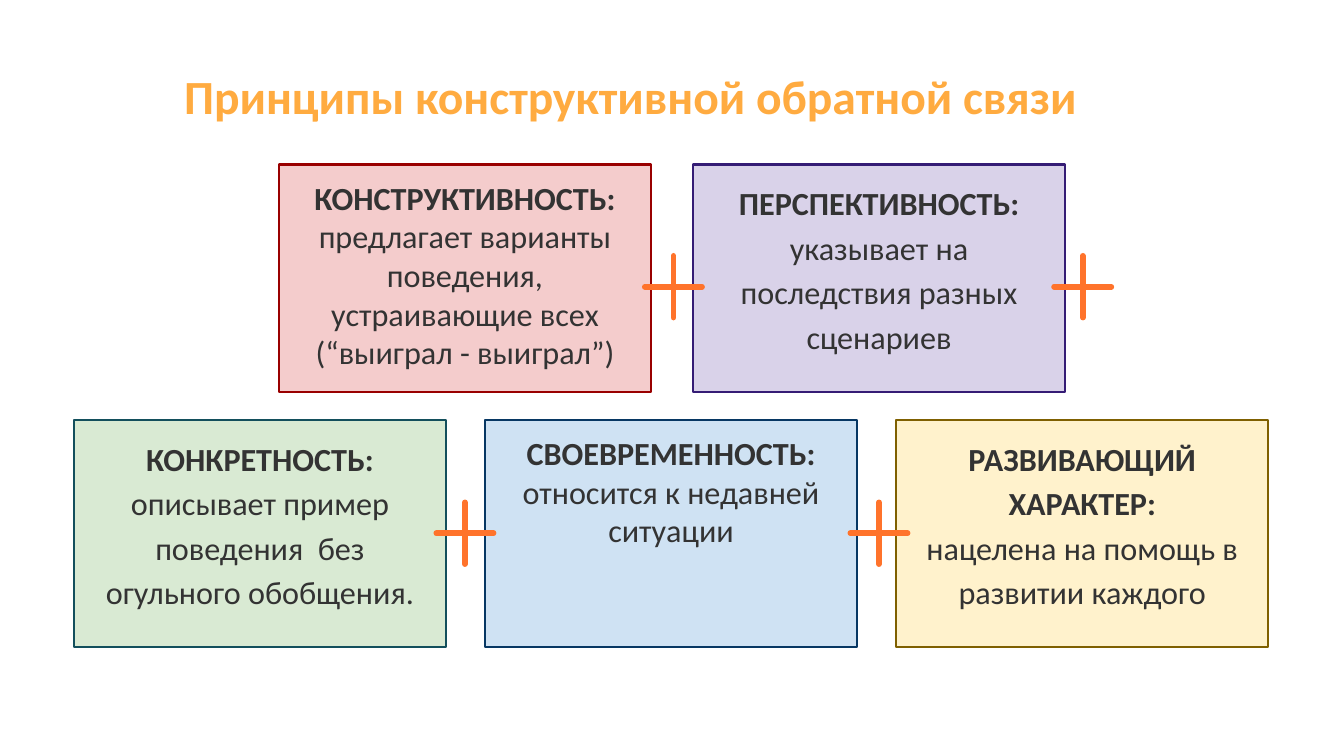
from pptx import Presentation
from pptx.dml.color import RGBColor
from pptx.enum.shapes import MSO_SHAPE as Shape
from pptx.enum.text import MSO_ANCHOR as Anchor, MSO_AUTO_SIZE as AutoSize, PP_ALIGN as Align
from pptx.util import Cm, Pt

FONT = "Calibri"
TEXT_COLOR = RGBColor(0x33, 0x33, 0x33)
TITLE_COLOR = RGBColor(0xFF, 0xAB, 0x40)
PLUS_LINE = RGBColor(0xFF, 0x73, 0x2B)
PLUS_FILL = RGBColor(0xEE, 0xEE, 0xEE)
GREEN, DARK_GREEN = RGBColor(0xD9, 0xEA, 0xD3), RGBColor(0x13, 0x4F, 0x5C)
BLUE, DARK_BLUE = RGBColor(0xCF, 0xE2, 0xF3), RGBColor(0x07, 0x37, 0x63)
YELLOW, DARK_YELLOW = RGBColor(0xFF, 0xF2, 0xCC), RGBColor(0x7F, 0x60, 0x00)
RED, DARK_RED = RGBColor(0xF4, 0xCC, 0xCC), RGBColor(0x99, 0x00, 0x00)
PURPLE, DARK_PURPLE = RGBColor(0xD9, 0xD2, 0xE9), RGBColor(0x35, 0x1C, 0x75)

TITLE = "Принципы конструктивной обратной связи"

# Card: heading, paragraphs after it, fill, outline, whether lines are spaced out
UPPER_CARDS = [
    ("КОНСТРУКТИВНОСТЬ:",
     ["предлагает варианты поведения, устраивающие всех", "(“выиграл - выиграл”)"],
     RED, DARK_RED, False),
    ("ПЕРСПЕКТИВНОСТЬ:", ["указывает на последствия разных сценариев"],
     PURPLE, DARK_PURPLE, True),
]
LOWER_CARDS = [
    ("КОНКРЕТНОСТЬ:", ["описывает пример поведения  без огульного обобщения."],
     GREEN, DARK_GREEN, True),
    ("СВОЕВРЕМЕННОСТЬ:", ["относится к недавней ситуации"],
     BLUE, DARK_BLUE, False),
    ("РАЗВИВАЮЩИЙ ХАРАКТЕР:", ["нацелена на помощь в развитии каждого"],
     YELLOW, DARK_YELLOW, True),
]

# All lengths in centimetres; "step" is the distance between left edges
ROWS = [
    dict(cards=UPPER_CARDS, left=10.54, top=6.22, step=15.65,
         plus_left=23.98, plus_top=9.25, plus_step=15.47),
    dict(cards=LOWER_CARDS, left=2.79, top=15.88, step=15.54,
         plus_left=16.1, plus_top=18.57, plus_step=15.65),
]
PLUSES_PER_ROW = 2
CARD_SIZE = Cm(14.07), Cm(8.59)
PLUS_SIZE = Cm(2.95), Cm(3.18)
INSET = Cm(0.51)


def prepare_frame(frame):
    frame.word_wrap = True
    frame.auto_size = AutoSize.NONE
    frame.vertical_anchor = Anchor.TOP
    frame.margin_left = frame.margin_right = INSET
    frame.margin_top = frame.margin_bottom = INSET


def style_font(font, size, color):
    font.name, font.size, font.color.rgb = FONT, Pt(size), color


def add_shape(slide, kind, left, top, size, fill, line, line_width):
    shape = slide.shapes.add_shape(kind, Cm(left), Cm(top), *size)
    shape.shadow.inherit = False
    shape.fill.solid()
    shape.fill.fore_color.rgb = fill
    shape.line.color.rgb = line
    shape.line.width = Pt(line_width)
    return shape


def add_card(slide, left, top, heading, texts, fill, line, spaced):
    box = add_shape(slide, Shape.RECTANGLE, left, top, CARD_SIZE, fill, line, 2.25)
    frame = box.text_frame
    prepare_frame(frame)
    for index, text in enumerate(texts):
        para = frame.add_paragraph() if index else frame.paragraphs[0]
        para.alignment = Align.CENTER
        style_font(para.font, 34.5, TEXT_COLOR)
        if spaced:
            para.line_spacing = 1.15
            para.space_after = Pt(32)
        if index == 0:
            span = para.add_run()
            span.text = heading
            span.font.bold = True
            para.add_line_break()
        para.add_run().text = text


def add_title(slide):
    title = slide.shapes.title
    title.left, title.top, title.width, title.height = Cm(6.45), Cm(2.01), Cm(38.71), Cm(3.18)
    prepare_frame(title.text_frame)
    title.text_frame.text = TITLE
    para = title.text_frame.paragraphs[0]
    para.alignment = Align.LEFT
    style_font(para.font, 51, TITLE_COLOR)
    para.font.bold = True


def main():
    deck = Presentation()
    deck.slide_width, deck.slide_height = Cm(50.8), Cm(28.58)
    slide = deck.slides.add_slide(deck.slide_layouts.get_by_name("Title Only"))
    add_title(slide)
    for row in ROWS:
        for index, card in enumerate(row["cards"]):
            add_card(slide, row["left"] + index * row["step"], row["top"], *card)
    for row in ROWS:
        for index in range(PLUSES_PER_ROW):
            plus = add_shape(slide, Shape.MATH_PLUS, row["plus_left"] + index * row["plus_step"],
                             row["plus_top"], PLUS_SIZE, PLUS_FILL, PLUS_LINE, 6)
            plus.adjustments[0] = 0
    deck.save("out.pptx")


if __name__ == "__main__":
    main()
